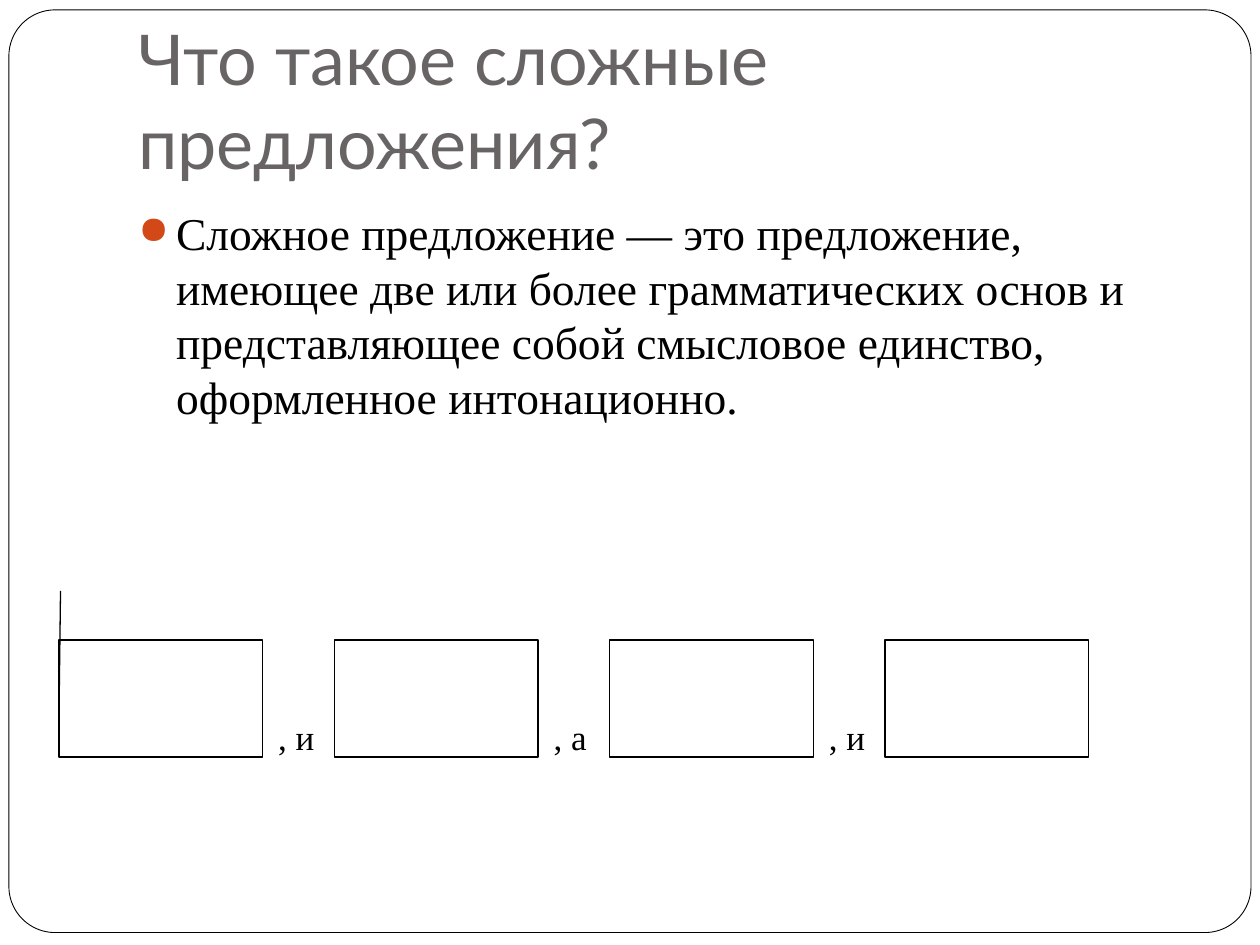
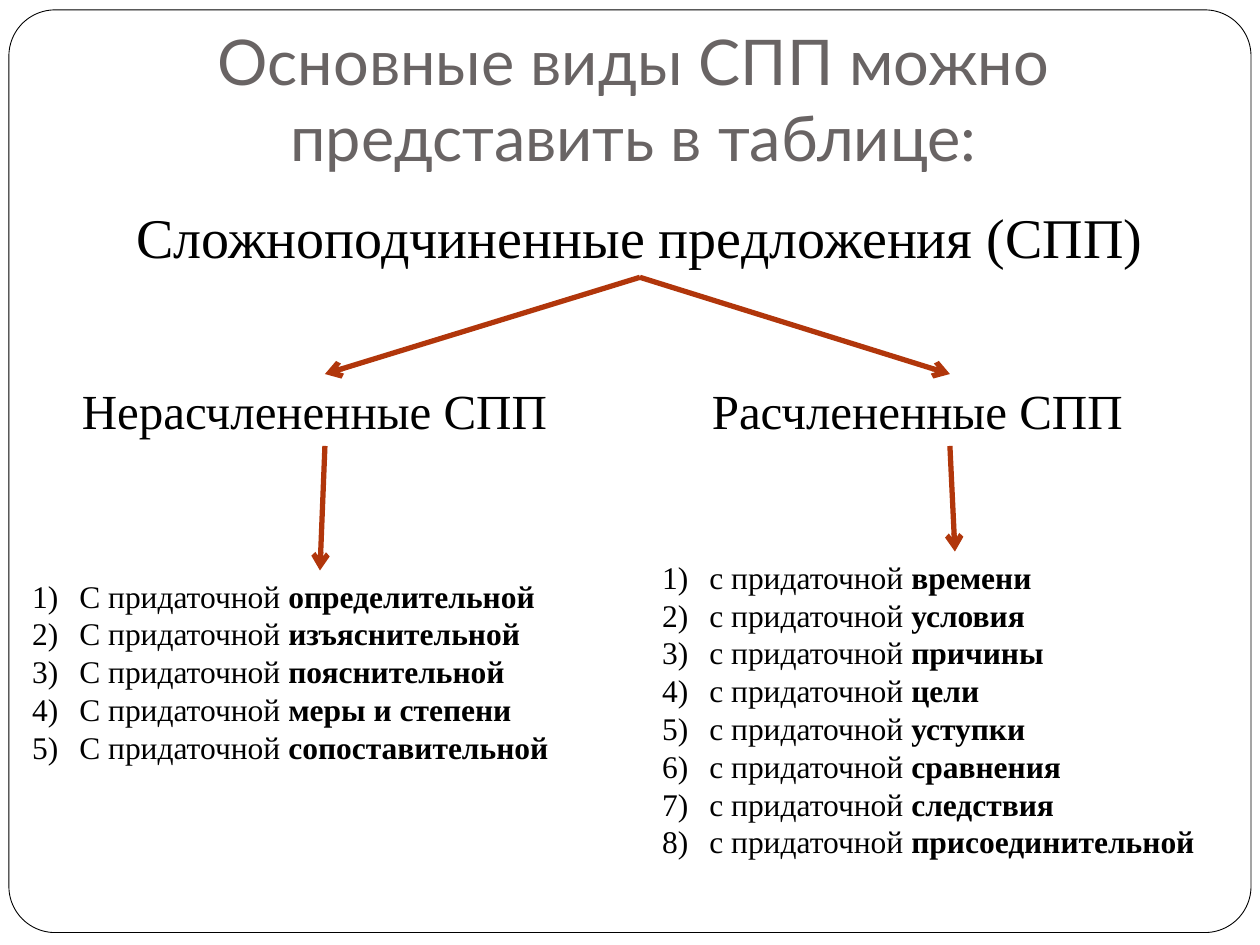
from lxml import etree
from pptx import Presentation
from pptx.dml.color import RGBColor
from pptx.enum import shapes, text
from pptx.oxml.ns import qn
from pptx.util import Cm, Pt

COLORS = {
    "paper": "FFFFFF",
    "ink": "000000",
    "title": "696464",
    "bullet": "D34817",
    "arrow": "B1360B",
}
TITLE_FONT = "Lato"
BODY_FONT = "Times New Roman"
LEFT, CENTER = text.PP_ALIGN.LEFT, text.PP_ALIGN.CENTER


def color(name):
    return RGBColor.from_string(COLORS[name])


def style(paragraph, size, font=BODY_FONT, ink="ink", align=LEFT):
    paragraph.alignment = align
    paragraph.font.size = Pt(size)
    paragraph.font.name = font
    paragraph.font.color.rgb = color(ink)


def add_text(slide, box, words, size, **options):
    """Add a wrapping text box; box is left, top, width, height in cm."""
    frame = slide.shapes.add_textbox(*map(Cm, box)).text_frame
    frame.word_wrap = True
    paragraph = frame.paragraphs[0]
    paragraph.text = words
    style(paragraph, size, **options)
    return frame


def hang(paragraph, indent):
    properties = paragraph._p.get_or_add_pPr()
    properties.set("marL", str(Cm(indent)))
    properties.set("indent", str(-Cm(indent)))
    return properties


def add_outlined(slide, kind, box, width):
    shape = slide.shapes.add_shape(kind, *map(Cm, box))
    shape.shadow.inherit = False
    shape.fill.solid()
    shape.fill.fore_color.rgb = color("paper")
    shape.line.color.rgb = color("ink")
    shape.line.width = Pt(width)
    return shape


def add_line(slide, start, end, ink, width, arrow=False):
    line = slide.shapes.add_connector(
        shapes.MSO_CONNECTOR.STRAIGHT, *map(Cm, (*start, *end)))
    line.line.color.rgb = color(ink)
    line.line.width = Pt(width)
    properties = line._element.spPr
    if arrow:
        etree.SubElement(properties.find(qn("a:ln")), qn("a:tailEnd"), type="arrow")
    etree.SubElement(properties, qn("a:effectLst"))


def add_titled_slide(presentation, title, box, size, align=LEFT):
    slide = presentation.slides.add_slide(presentation.slide_layouts[6])
    # Rounded page frame
    frame = add_outlined(slide, shapes.MSO_SHAPE.ROUNDED_RECTANGLE,
                         (0.18, 0.2, 25.04, 18.6), 0.5)
    frame.adjustments[0] = 0.05
    # Title
    title_frame = add_text(slide, box, title, size,
                           font=TITLE_FONT, ink="title", align=align)
    title_frame.vertical_anchor = text.MSO_ANCHOR.BOTTOM
    title_frame.margin_bottom = Cm(0.25)
    return slide


def add_definition(slide, box, words):
    paragraph = add_text(slide, box, words, 26).paragraphs[0]
    paragraph.space_before = Pt(5.8)
    properties = hang(paragraph, 0.76)
    bullet_color = etree.SubElement(properties, qn("a:buClr"))
    etree.SubElement(bullet_color, qn("a:srgbClr"), val=COLORS["bullet"])
    etree.SubElement(properties, qn("a:buSzPct"), val="85000")
    etree.SubElement(properties, qn("a:buChar"), char="●")


def add_clause_scheme(slide, left, top, conjunctions):
    """Draw a row of clause boxes with a conjunction in each gap."""
    width, height, pitch = 4.11, 2.36, 5.55
    for index in range(len(conjunctions) + 1):
        add_outlined(slide, shapes.MSO_SHAPE.RECTANGLE,
                     (left + index * pitch, top, width, height), 0.75)
    add_line(slide, (left + 0.03, top - 0.99), (left, top + 1.45), "ink", 0.75)
    for index, conjunction in enumerate(conjunctions):
        add_text(slide, (left + index * pitch + 4.17, top + 1.4, 1.78, 1.12),
                 conjunction, 20)


def add_numbered_list(slide, box, lead, endings):
    frame = add_text(slide, box, "", 18)
    for index, ending in enumerate(endings):
        paragraph = frame.add_paragraph() if index else frame.paragraphs[0]
        style(paragraph, 18)
        etree.SubElement(hang(paragraph, 0.95), qn("a:buAutoNum"), type="arabicParenR")
        paragraph.add_run().text = lead + " "
        run = paragraph.add_run()
        run.text = ending
        run.font.bold = True


def add_branch(slide, root, heading, heading_box, joint, tip, lead, endings, list_box):
    """Draw one kind of sentence: arrow, heading, arrow, list."""
    add_text(slide, heading_box, heading, 28)
    add_numbered_list(slide, list_box, lead, endings)
    add_line(slide, root, (joint, heading_box[1]), "arrow", 3, arrow=True)
    add_line(slide, (joint, heading_box[1] + heading_box[3]), (tip, list_box[1]),
             "arrow", 3, arrow=True)


def build_definition_slide(presentation):
    slide = add_titled_slide(presentation, "Что такое сложные предложения?",
                             (2.54, 0.76, 21.59, 3.18), 40)
    add_definition(
        slide, (2.54, 4.01, 21.59, 5.89),
        "Сложное предложение — это предложение, имеющее две или более "
        "грамматических основ и представляющее собой смысловое единство, "
        "оформленное интонационно.")
    add_clause_scheme(slide, 1.19, 12.9, [", и", ", а", ", и"])


def build_kinds_slide(presentation):
    slide = add_titled_slide(
        presentation, "Основные виды СПП можно представить в таблице:",
        (1.98, 0.58, 21.59, 3.18), 36, CENTER)
    add_text(slide, (1.19, 3.96, 23.42, 1.63),
             "Сложноподчиненные предложения (СПП)", 32, align=CENTER)
    root = (12.9, 5.59)
    add_branch(
        slide, root, "Нерасчлененные СПП", (1.4, 7.54, 10.31, 1.45), 6.55, 6.45,
        "С придаточной",
        ["определительной", "изъяснительной", "пояснительной",
         "меры и степени", "сопоставительной"],
        (0.4, 11.5, 12.12, 4.11))
    add_branch(
        slide, root, "Расчлененные СПП", (14.1, 7.54, 10.11, 1.45), 19.15, 19.25,
        "с придаточной",
        ["времени", "условия", "причины", "цели", "уступки",
         "сравнения", "следствия", "присоединительной"],
        (13.1, 11.12, 12.29, 7.19))


def main():
    presentation = Presentation()
    presentation.slide_width, presentation.slide_height = Cm(25.4), Cm(19.05)
    build_definition_slide(presentation)
    build_kinds_slide(presentation)
    presentation.save("out.pptx")


if __name__ == "__main__":
    main()
